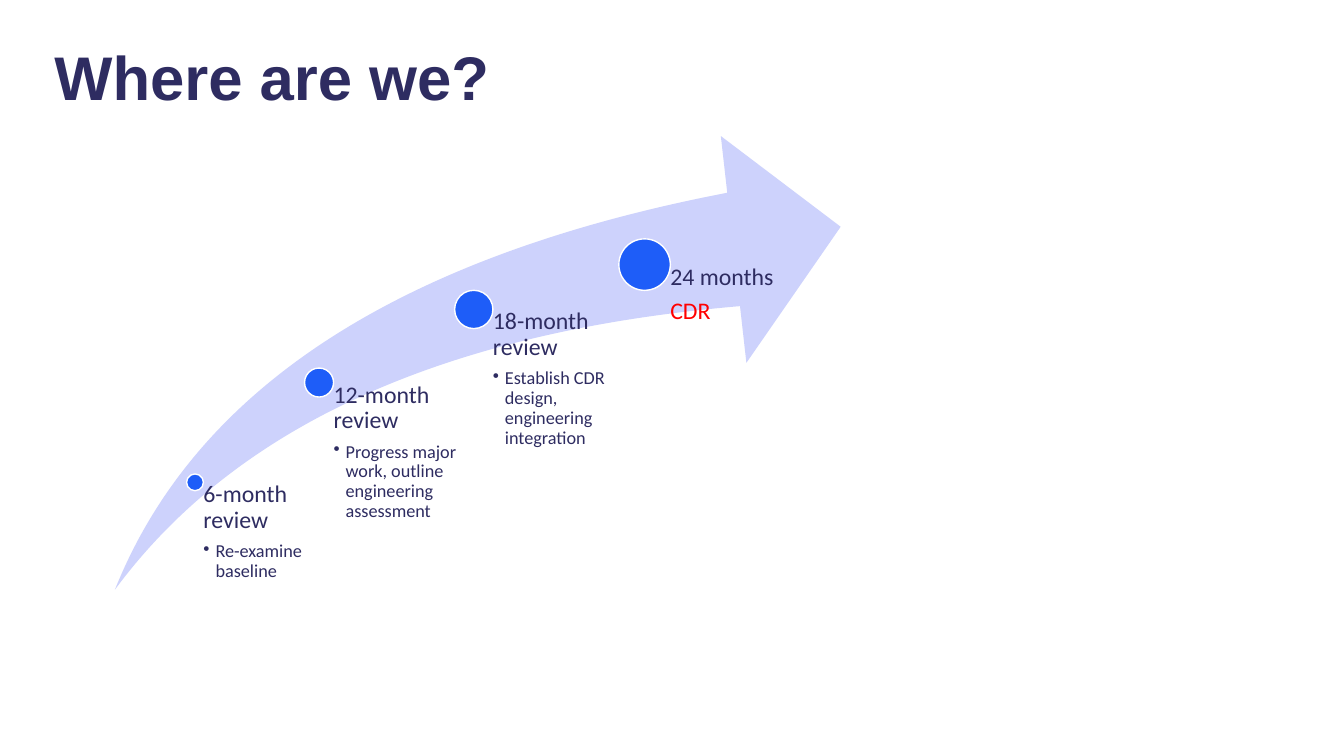
from lxml import etree
from pptx import Presentation
from pptx.dml.color import RGBColor
from pptx.enum.shapes import MSO_SHAPE
from pptx.enum.text import MSO_ANCHOR, MSO_AUTO_SIZE, PP_ALIGN
from pptx.oxml.ns import qn
from pptx.util import Inches, Pt

SWOOSH, OVAL = MSO_SHAPE.SWOOSH_ARROW, MSO_SHAPE.OVAL
MIDDLE, LEFT = MSO_ANCHOR.MIDDLE, PP_ALIGN.LEFT
FIXED = MSO_AUTO_SIZE.NONE

COLORS = {"ink": "2E2C61", "arrow": "CDD2FC", "dot": "1E5DF8",
          "white": "FFFFFF", "alert": "FF0000"}
FOOT = 78
STAGES = [
    (14.51, 63.8, 1.25, 9.23, "6-month review", "Re-examine baseline"),
    (23.74, 50.6, 2.16, 11.33, "12-month review",
     "Progress major work, outline\vengineering assessment"),
    (35.25, 40.93, 2.85, 11.33, "18-month review",
     "Establish CDR design, engineering integration"),
    (47.96, 35, 3.83, 11.33, "24 months", None),
]


class Board:
    """Draw styled elements on one slide, with lengths in percent of its size."""

    def __init__(self, deck):
        self.deck = deck
        self.slide = deck.slides.add_slide(deck.slide_layouts[5])

    def wide(self, share):
        return round(self.deck.slide_width * share / 100)

    def high(self, share):
        return round(self.deck.slide_height * share / 100)

    def color(self, name):
        return RGBColor.from_string(COLORS[name])

    def title(self, text, x, y, w, h):
        box = self.slide.shapes.title
        box.left, box.top = self.wide(x), self.high(y)
        box.width, box.height = self.wide(w), self.high(h)
        frame = box.text_frame
        frame.text = text
        frame.auto_size = FIXED
        frame.vertical_anchor = MIDDLE
        para = frame.paragraphs[0]
        para.alignment = LEFT
        self.style(para, 44, "ink", "Arial", 0, True)

    def style(self, para, size, color, face="Calibri", after=6, bold=False):
        para.line_spacing = 0.9
        para.space_after = Pt(after)
        for run in para.runs:
            font = run.font
            font.name, font.size, font.bold = face, Pt(size), bold
            font.color.rgb = self.color(color)

    def shape(self, kind, x, y, w, h, fill):
        item = self.slide.shapes.add_shape(kind, x, y, w, h)
        item.shadow.inherit = False
        item.fill.solid()
        item.fill.fore_color.rgb = self.color(fill)
        item.line.fill.background()
        return item

    def arrow(self, x, y, w, h):
        item = self.shape(SWOOSH, self.wide(x), self.high(y),
                          self.wide(w), self.high(h), "arrow")
        item.adjustments[0] = item.adjustments[1] = 0.25

    def dot(self, x, y, size):
        side = self.wide(size)
        item = self.shape(OVAL, self.wide(x) - side // 2,
                          self.high(y) - side // 2, side, side, "dot")
        item.line.color.rgb = self.color("white")
        item.line.width = Pt(1)

    def bullet(self, para):
        props = para._p.get_or_add_pPr()
        props.set("marL", str(Inches(0.12)))
        props.set("indent", str(-Inches(0.12)))
        etree.SubElement(props, qn("a:buChar")).set("char", "•")

    def label(self, x, y, w, inset, head, task):
        box = self.slide.shapes.add_textbox(
            self.wide(x), self.high(y), self.wide(w), self.high(FOOT - y))
        frame = box.text_frame
        frame.word_wrap = True
        frame.auto_size = FIXED
        frame.margin_left = self.wide(inset)
        frame.margin_top = frame.margin_right = frame.margin_bottom = 0
        first = frame.paragraphs[0]
        first.text = head
        self.style(first, 17, "ink")
        para = frame.add_paragraph()
        para.text = task or "CDR"
        if task:
            para.level = 1
            self.bullet(para)
            self.style(para, 13, "ink", after=2)
        else:
            self.style(para, 17, "alert")


def main():
    deck = Presentation()
    deck.slide_width, deck.slide_height = Inches(13.33), Inches(7.5)
    board = Board(deck)
    board.title("Where are we?", 3.3, 5.07, 95.87, 11.2)
    board.arrow(8.55, 18, 54, FOOT - 18)
    for x, y, size, width, head, task in STAGES:
        board.dot(x, y, size)
        board.label(x, y, width, size / 2, head, task)
    deck.save("out.pptx")


if __name__ == "__main__":
    main()
